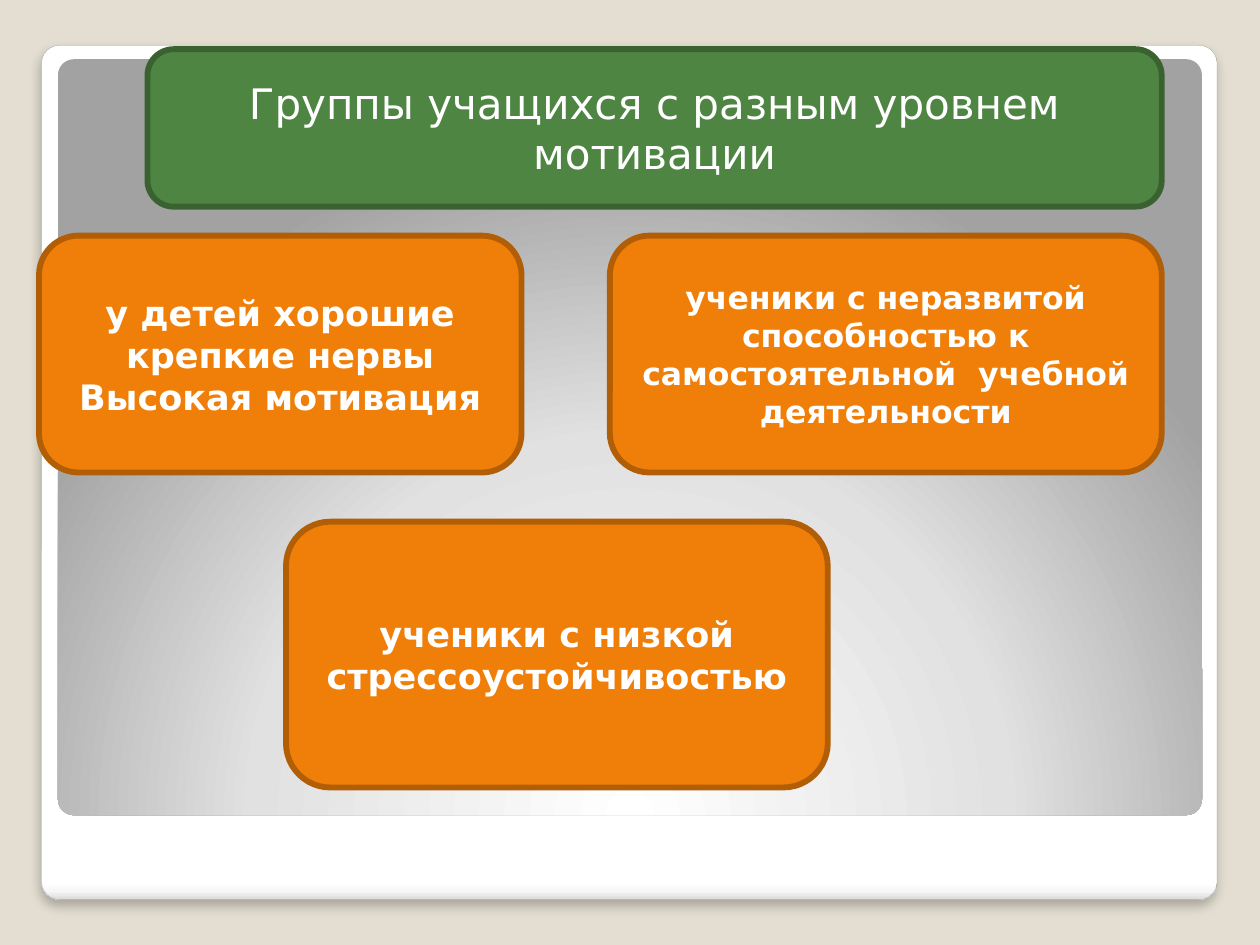
"""Build a slide on groups of pupils with different levels of motivation."""
import dataclasses
import typing

import lxml.etree
import pptx
import pptx.dml.color
import pptx.enum.shapes
import pptx.enum.text
import pptx.oxml
import pptx.oxml.ns
import pptx.util

Inches = pptx.util.Inches
FONT = "DejaVu Sans"
COLOURS = {
    "background": "E3DED1",
    "frame_line": "A4A4A4",
    "shadow": "000000",
    "text": "FFFFFF",
    "green": "4E8542",
    "green_line": "3A6231",
    "orange": "F07F09",
    "orange_line": "B25E07",
}


@dataclasses.dataclass(frozen=True)
class Box:
    left: float
    top: float
    width: float
    height: float


@dataclasses.dataclass(frozen=True)
class Panel:
    box: Box
    stops: tuple[tuple[int, str], ...]
    direction: str


@dataclasses.dataclass(frozen=True)
class Card:
    box: Box
    paragraphs: tuple[str, ...]
    size: int
    colour: str = "orange"
    bold: bool = True


FRAME = Panel(
    Box(0.33, 0.36, 9.33, 6.78),
    ((0, "FFFFFF"), (98, "FFFFFF"), (99, "F7F7F7"), (100, "DADADA")),
    '<a:lin ang="5400000" scaled="0"/>',
)
BACKDROP = Panel(
    Box(0.46, 0.47, 9.08, 6),
    ((0, "FFFFFF"), (55, "E1E1E1"), (100, "A2A2A2")),
    '<a:path path="circle"><a:fillToRect l="50000" t="175000" r="50000" b="-75000"/></a:path>',
)
CARDS = (
    Card(Box(1.17, 0.39, 8.05, 1.25), ("Группы учащихся с разным уровнем мотивации",),
         24, "green", False),
    Card(Box(0.31, 1.87, 3.83, 1.88), ("у детей хорошие крепкие нервы", "Высокая мотивация"), 20),
    Card(Box(2.27, 4.14, 4.3, 2.11), ("ученики с низкой стрессоустойчивостью",), 20),
    Card(Box(4.84, 1.87, 4.38, 1.88),
         ("ученики с неразвитой способностью к самостоятельной  учебной деятельности",), 18),
)


def rgb(name: str) -> pptx.dml.color.RGBColor:
    """Return the named colour."""
    return pptx.dml.color.RGBColor.from_string(COLOURS[name])


def add_round_box(slide: typing.Any, box: Box) -> typing.Any:
    """Add a rounded rectangle without a shadow."""
    shape = slide.shapes.add_shape(
        pptx.enum.shapes.MSO_SHAPE.ROUNDED_RECTANGLE,
        Inches(box.left), Inches(box.top), Inches(box.width), Inches(box.height),
    )
    shape.shadow.inherit = False
    return shape


def add_panel(slide: typing.Any, panel: Panel) -> typing.Any:
    """Add a gradient panel without an outline."""
    shape = add_round_box(slide, panel.box)
    shape.adjustments[0] = 0.021
    shape.line.fill.background()
    shape.fill.background()
    stops = "".join(
        f'<a:gs pos="{position * 1000}"><a:srgbClr val="{colour}"/></a:gs>'
        for position, colour in panel.stops
    )
    gradient = pptx.oxml.parse_xml(
        f'<a:gradFill {pptx.oxml.ns.nsdecls("a")} rotWithShape="1">'
        f"<a:gsLst>{stops}</a:gsLst>{panel.direction}</a:gradFill>"
    )
    properties = shape.element.spPr
    properties.replace(properties.find(pptx.oxml.ns.qn("a:noFill")), gradient)
    return shape


def add_drop_shadow(shape: typing.Any) -> None:
    """Give the shape a soft shadow below it."""
    qn = pptx.oxml.ns.qn
    effects = shape.element.spPr.find(qn("a:effectLst"))
    shadow = lxml.etree.SubElement(
        effects, qn("a:outerShdw"), blurRad=str(pptx.util.Pt(6)),
        dist=str(pptx.util.Pt(4)), dir="5400000", algn="t", rotWithShape="0",
    )
    colour = lxml.etree.SubElement(shadow, qn("a:srgbClr"), val=COLOURS["shadow"])
    lxml.etree.SubElement(colour, qn("a:alpha"), val="25000")


def add_card(slide: typing.Any, card: Card) -> None:
    """Add a filled card with centred text."""
    shape = add_round_box(slide, card.box)
    shape.fill.solid()
    shape.fill.fore_color.rgb = rgb(card.colour)
    shape.line.color.rgb = rgb(f"{card.colour}_line")
    shape.line.width = pptx.util.Pt(3.35)
    frame = shape.text_frame
    frame.word_wrap = True
    frame.vertical_anchor = pptx.enum.text.MSO_ANCHOR.MIDDLE
    frame.text = "\n".join(card.paragraphs)
    for paragraph in frame.paragraphs:
        paragraph.alignment = pptx.enum.text.PP_ALIGN.CENTER
        paragraph.font.name = FONT
        paragraph.font.size = pptx.util.Pt(card.size)
        paragraph.font.bold = card.bold
        paragraph.font.color.rgb = rgb("text")


def main() -> None:
    """Build and save the slide."""
    presentation = pptx.Presentation()
    presentation.slide_width = Inches(10)
    presentation.slide_height = Inches(7.5)
    slide = presentation.slides.add_slide(presentation.slide_layouts[6])
    slide.background.fill.solid()
    slide.background.fill.fore_color.rgb = rgb("background")
    frame = add_panel(slide, FRAME)
    frame.line.color.rgb = rgb("frame_line")
    frame.line.width = pptx.util.Pt(0.16)
    add_drop_shadow(frame)
    add_panel(slide, BACKDROP)
    for card in CARDS:
        add_card(slide, card)
    presentation.save("out.pptx")


if __name__ == "__main__":
    main()
